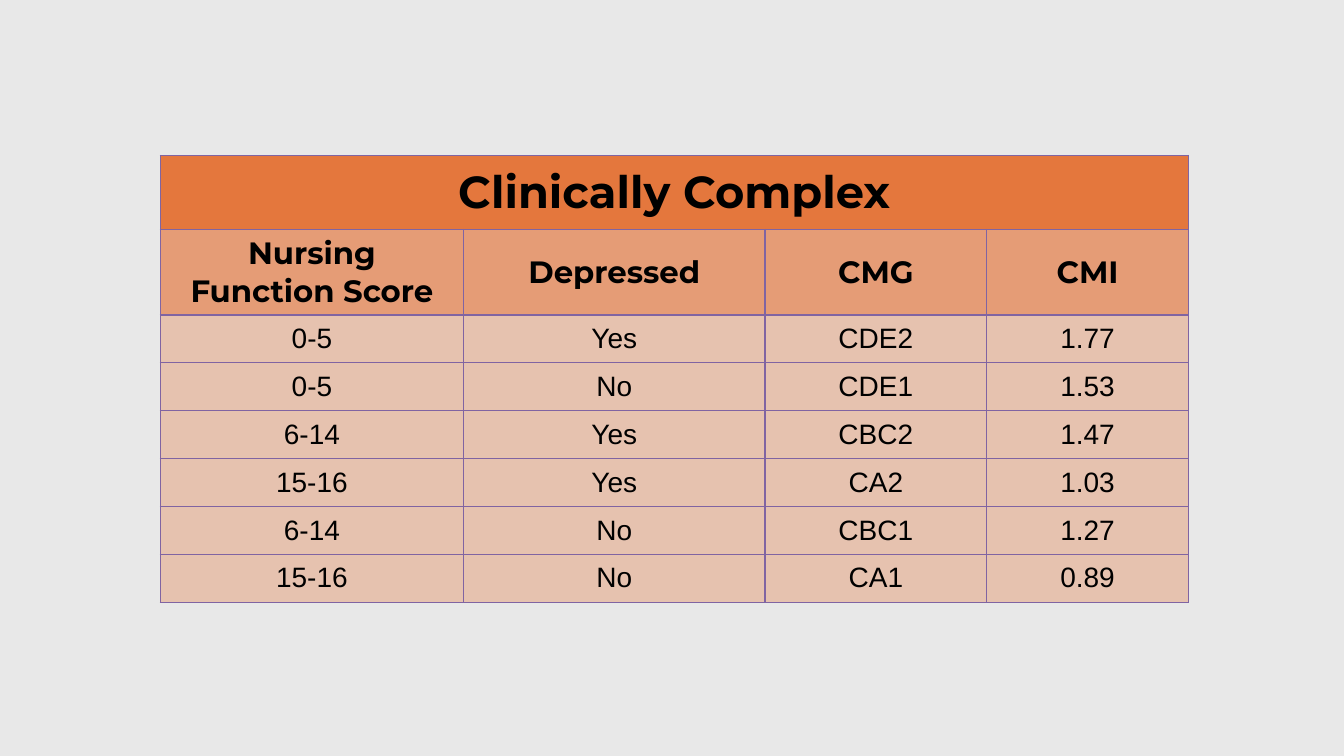
from pptx import Presentation
from pptx.dml.color import RGBColor as RGB
from pptx.enum.text import MSO_ANCHOR as Anchor, PP_ALIGN as Align
from pptx.oxml import parse_xml
from pptx.oxml.ns import nsdecls, qn
from pptx.util import Pt

COLORS = {"back": "E8E8E8", "fill": "E35205", "line": "8064A2", "text": "000000"}
COLS = [216.7, 215.3, 158.4, 144]
TITLE = "Clinically Complex"
HEADS = ["Nursing\nFunction Score", "Depressed", "CMG", "CMI"]
SCORES = [
    ["0-5", "Yes", "CDE2", "1.77"],
    ["0-5", "No", "CDE1", "1.53"],
    ["6-14", "Yes", "CBC2", "1.47"],
    ["15-16", "Yes", "CA2", "1.03"],
    ["6-14", "No", "CBC1", "1.27"],
    ["15-16", "No", "CA1", "0.89"],
]
STYLES = {
    "title": {"size": 32, "font": "Montserrat", "bold": True, "alpha": 75, "height": 53},
    "head": {"size": 22, "font": "Montserrat", "bold": True, "alpha": 50, "height": 61},
    "score": {"size": 20, "font": "Arial", "bold": False, "alpha": 25, "height": 34.2},
}


def color(name):
    return RGB.from_string(COLORS[name])


def add_edges(cell):
    props = cell._tc.get_or_add_tcPr()
    for i, side in enumerate("LRTB"):
        props.insert(i, parse_xml(
            f'<a:ln{side} {nsdecls("a")} w="{Pt(1)}"><a:solidFill>'
            f'<a:srgbClr val="{COLORS["line"]}"/></a:solidFill></a:ln{side}>'))


def paint(cell, alpha):
    cell.fill.solid()
    cell.fill.fore_color.rgb = color("fill")
    shade = cell._tc.tcPr.find(qn("a:solidFill")).find(qn("a:srgbClr"))
    shade.append(parse_xml(f'<a:alpha {nsdecls("a")} val="{alpha * 1000}"/>'))
    add_edges(cell)


def write(cell, text, style):
    cell.text = text
    cell.vertical_anchor = Anchor.MIDDLE
    for para in cell.text_frame.paragraphs:
        para.alignment = Align.CENTER
        font = para.font
        font.name = style["font"]
        font.size = Pt(style["size"])
        font.bold = style["bold"]
        font.color.rgb = color("text")


def fill_row(table, index, texts, style):
    table.rows[index].height = Pt(style["height"])
    for cell, text in zip(table.rows[index].cells, texts):
        paint(cell, style["alpha"])
        write(cell, text, style)


def add_grid(slide):
    rows = [([TITLE, "", "", ""], "title"), (HEADS, "head")]
    rows += [(score, "score") for score in SCORES]
    height = sum(STYLES[kind]["height"] for _, kind in rows)
    frame = slide.shapes.add_table(
        len(rows), len(COLS), Pt(114.5), Pt(111), Pt(sum(COLS)), Pt(height))
    table = frame.table
    table.horz_banding = False
    for col, width in zip(table.columns, COLS):
        col.width = Pt(width)
    for i, (texts, kind) in enumerate(rows):
        fill_row(table, i, texts, STYLES[kind])
    table.cell(0, 0).merge(table.cell(0, len(COLS) - 1))


def main():
    deck = Presentation()
    deck.slide_width, deck.slide_height = Pt(960), Pt(540)
    slide = deck.slides.add_slide(deck.slide_layouts[6])
    back = slide.background.fill
    back.solid()
    back.fore_color.rgb = color("back")
    add_grid(slide)
    deck.save("out.pptx")


if __name__ == "__main__":
    main()
